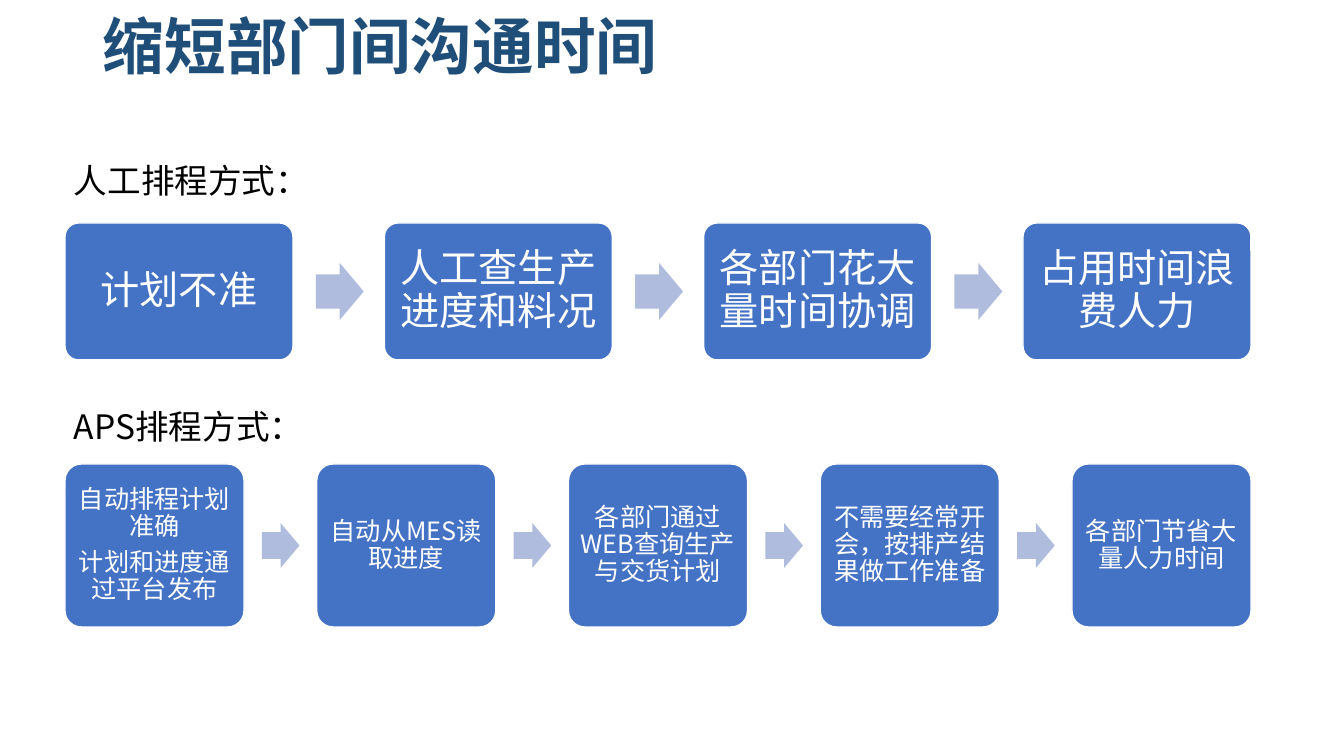
from dataclasses import dataclass

from lxml.etree import SubElement
from pptx import Presentation
from pptx.dml.color import RGBColor
from pptx.enum.shapes import MSO_SHAPE
from pptx.enum.text import MSO_ANCHOR, PP_ALIGN
from pptx.oxml.ns import qn
from pptx.shapes.autoshape import Shape
from pptx.slide import Slide
from pptx.text.text import _Paragraph
from pptx.util import Emu, Pt

FONT = "Noto Sans CJK SC"
WHITE = RGBColor(0xFF, 0xFF, 0xFF)
BLACK = RGBColor(0x00, 0x00, 0x00)
NAVY = RGBColor(0x1F, 0x4E, 0x79)
BLUE = RGBColor(0x44, 0x72, 0xC4)
PALE_BLUE = RGBColor(0xB0, 0xBC, 0xDE)

FLOW_LEFT, FLOW_RIGHT = 65, 1251
# Arrow proportions, relative to the width of a step box
ARROW_GAP, ARROW_WIDTH, ARROW_HEIGHT = 0.1, 0.21, 0.25


@dataclass
class Flow:
    label: str
    label_top: int
    top: int
    width: int
    height: int
    inset: int
    size: int
    steps: list[str]


FLOWS = [
    Flow("人工排程方式：", 155, 223, 228, 137, 11, 28,
         ["计划不准", "人工查生产进度和料况", "各部门花大量时间协调", "占用时间浪费人力"]),
    Flow("APS排程方式：", 401, 464, 179, 163, 7, 18,
         ["自动排程计划准确\n计划和进度通过平台发布", "自动从MES读取进度",
          "各部门通过WEB查询生产与交货计划", "不需要经常开会，按排产结果做工作准备",
          "各部门节省大量人力时间"]),
]


def px(n: float) -> Emu:
    return Emu(round(n * 914400 / 100.8))


def style_font(p: _Paragraph, size: int, color: RGBColor, bold: bool = False) -> None:
    """Set the font for both Latin and East Asian text."""
    p.font.name = FONT
    p.font.size = Pt(size)
    p.font.bold = bold
    p.font.color.rgb = color
    SubElement(p._p.pPr.find(qn("a:defRPr")), qn("a:ea"), typeface=FONT)


def add_text(slide: Slide, text: str, left: int, top: int, width: int, height: int,
             size: int, color: RGBColor, bold: bool = False) -> None:
    tf = slide.shapes.add_textbox(px(left), px(top), px(width), px(height)).text_frame
    tf.word_wrap = True
    tf.vertical_anchor = MSO_ANCHOR.MIDDLE if bold else MSO_ANCHOR.TOP
    p = tf.paragraphs[0]
    p.text = text
    if bold:
        p.line_spacing = 0.9
    style_font(p, size, color, bold)


def add_filled(slide: Slide, kind: MSO_SHAPE, left: float, top: float,
               width: float, height: float, fill: RGBColor) -> Shape:
    sp = slide.shapes.add_shape(kind, px(left), px(top), px(width), px(height))
    sp.shadow.inherit = False
    sp.fill.solid()
    sp.fill.fore_color.rgb = fill
    sp.line.fill.background()
    return sp


def add_step(slide: Slide, flow: Flow, left: float, text: str) -> None:
    sp = add_filled(slide, MSO_SHAPE.ROUNDED_RECTANGLE, left, flow.top,
                    flow.width, flow.height, BLUE)
    sp.adjustments[0] = 0.1
    sp.line.color.rgb = WHITE
    sp.line.width = Pt(1)
    tf = sp.text_frame
    tf.word_wrap = True
    tf.vertical_anchor = MSO_ANCHOR.MIDDLE
    tf.margin_left = tf.margin_right = tf.margin_top = tf.margin_bottom = px(flow.inset)
    tf.text = text
    for p in tf.paragraphs:
        p.alignment = PP_ALIGN.CENTER
        p.line_spacing = 0.9
        p.space_after = Pt(flow.size * 0.35)
        style_font(p, flow.size, WHITE)


def add_arrow(slide: Slide, flow: Flow, step_left: float) -> None:
    height = flow.width * ARROW_HEIGHT
    sp = add_filled(slide, MSO_SHAPE.RIGHT_ARROW,
                    step_left + flow.width * (1 + ARROW_GAP),
                    flow.top + (flow.height - height) / 2,
                    flow.width * ARROW_WIDTH, height, PALE_BLUE)
    sp.adjustments[0] = 0.6
    sp.adjustments[1] = 0.5


def add_flow(slide: Slide, flow: Flow) -> None:
    add_text(slide, flow.label, 64, flow.label_top, 260, 50, 24, BLACK)
    last = len(flow.steps) - 1
    pitch = (FLOW_RIGHT - FLOW_LEFT - flow.width) / last
    for i, text in enumerate(flow.steps):
        left = FLOW_LEFT + i * pitch
        add_step(slide, flow, left, text)
        if i < last:
            add_arrow(slide, flow, left)


def main() -> None:
    prs = Presentation()
    prs.slide_width, prs.slide_height = px(1344), px(756)
    slide = prs.slides.add_slide(prs.slide_layouts[6])
    add_text(slide, "缩短部门间沟通时间", 93, 15, 1159, 69, 44, NAVY, bold=True)
    for flow in FLOWS:
        add_flow(slide, flow)
    prs.save("out.pptx")


if __name__ == "__main__":
    main()
